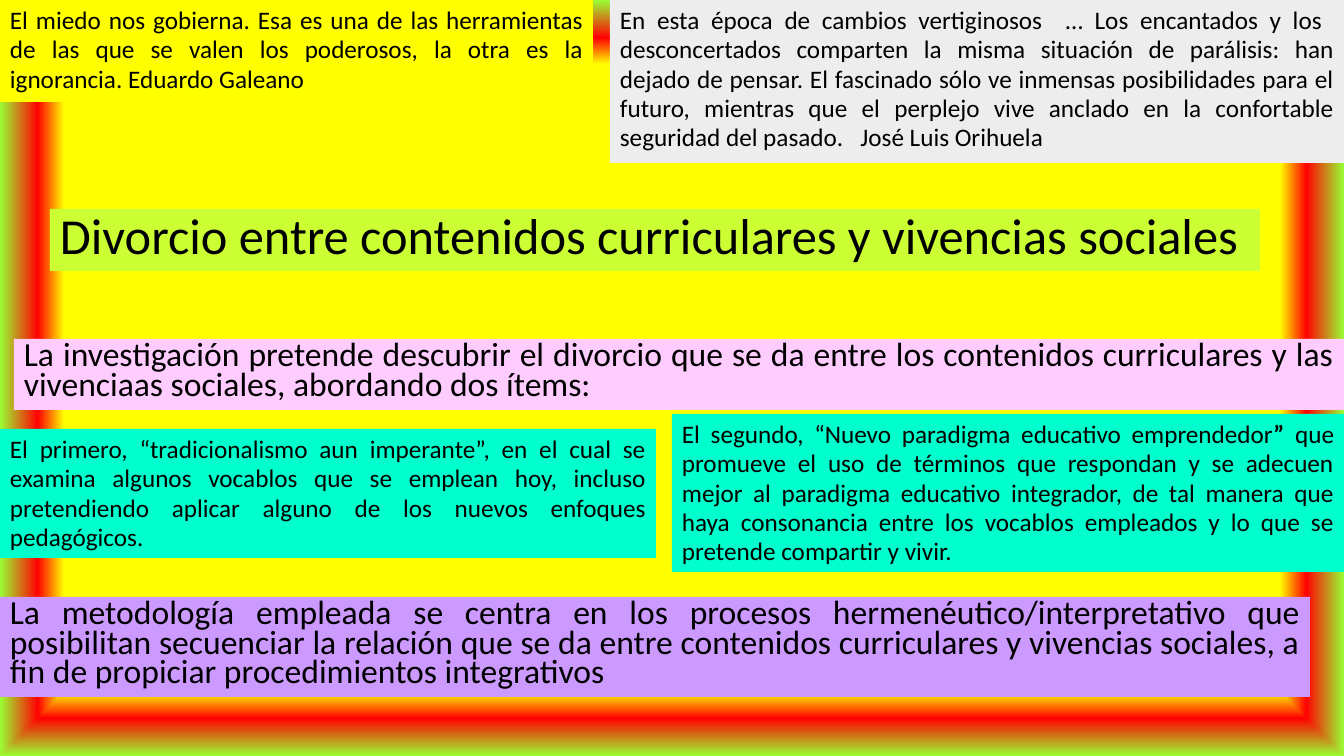
from pptx import Presentation
from pptx.dml.color import RGBColor
from pptx.enum.shapes import MSO_SHAPE
from pptx.enum.text import MSO_ANCHOR, MSO_AUTO_SIZE, PP_ALIGN
from pptx.oxml import parse_xml
from pptx.oxml.ns import nsdecls, qn
from pptx.util import Emu, Pt

PX = 914400 / 100.8
SLIDE_SIZE = (1344, 756)
FONT = "Calibri"

BLACK = RGBColor(0x00, 0x00, 0x00)
YELLOW = RGBColor(0xFF, 0xFF, 0x00)
RED = RGBColor(0xFF, 0x00, 0x00)
GRASS = RGBColor(0x99, 0xFF, 0x33)
GREEN = RGBColor(0x66, 0xFF, 0x33)
GRAY = RGBColor(0xED, 0xED, 0xED)
LIME = RGBColor(0xCC, 0xFF, 0x33)
PINK = RGBColor(0xFF, 0xCC, 0xFF)
TURQUOISE = RGBColor(0x00, 0xFF, 0xCC)
VIOLET = RGBColor(0xCC, 0x99, 0xFF)

BACKGROUND_STOPS = [(83, YELLOW), (90, RED), (100, GRASS), (100, GREEN)]


def px(length):
    return Emu(round(length * PX))


def paint_background(slide):
    """Rectangular gradient that leaves a glowing frame at the slide edges."""
    slide.background.fill.gradient()
    gradient = slide.element.find(".//" + qn("a:gradFill"))
    stops = "".join(
        f'<a:gs pos="{position * 1000}"><a:srgbClr val="{color}"/></a:gs>'
        for position, color in BACKGROUND_STOPS
    )
    center = 'l="50000" t="50000" r="50000" b="50000"'
    gradient.getparent().replace(gradient, parse_xml(
        f'<a:gradFill {nsdecls("a")} rotWithShape="1"><a:gsLst>{stops}</a:gsLst>'
        f'<a:path path="rect"><a:fillToRect {center}/></a:path></a:gradFill>'
    ))


def add_panel(slide, box, color, size, runs, spacing=21, wrap=True):
    """Filled box with one justified paragraph; runs are (text, bold) pairs."""
    panel = slide.shapes.add_shape(MSO_SHAPE.RECTANGLE, *map(px, box))
    panel.shadow.inherit = False
    panel.fill.solid()
    panel.fill.fore_color.rgb = color
    panel.line.fill.background()

    frame = panel.text_frame
    frame.word_wrap = wrap
    frame.auto_size = MSO_AUTO_SIZE.SHAPE_TO_FIT_TEXT
    frame.vertical_anchor = MSO_ANCHOR.TOP
    paragraph = frame.paragraphs[0]
    paragraph.alignment = PP_ALIGN.JUSTIFY
    paragraph.line_spacing = Pt(spacing)
    for text, bold in runs:
        run = paragraph.add_run()
        run.text = text
        run.font.name = FONT
        run.font.size = Pt(size)
        run.font.bold = bold
        run.font.color.rgb = BLACK


def add_statements(slide):
    """Purpose and methodology of the research."""
    add_panel(slide, (14, 339, 1330, 71), PINK, 24, [(
        "La investigación pretende descubrir el divorcio que se da entre los "
        "contenidos curriculares y las vivenciaas sociales, abordando dos ítems: ",
        False)])
    add_panel(slide, (0, 597, 1310, 100), VIOLET, 24, [(
        "La metodología empleada se centra en los procesos "
        "hermenéutico/interpretativo que posibilitan secuenciar la relación que "
        "se da entre contenidos curriculares y vivencias sociales, a fin de "
        "propiciar procedimientos integrativos", False)])


def add_quotes(slide):
    """Two opening quotations along the top edge."""
    add_panel(slide, (0, 0, 593, 102), YELLOW, 18, [(
        "El miedo nos gobierna. Esa es una de las herramientas de las que se "
        "valen los poderosos, la otra es la ignorancia. Eduardo Galeano", False)])
    add_panel(slide, (610, 0, 734, 163), GRAY, 18, [(
        "En esta época de cambios vertiginosos  … Los encantados y los  "
        "desconcertados comparten la misma situación de parálisis: han dejado de "
        "pensar. El fascinado sólo ve inmensas posibilidades para el futuro, "
        "mientras que el perplejo vive anclado en la confortable seguridad del "
        "pasado.   José Luis Orihuela", False)])


def add_items(slide):
    """The two items the research addresses."""
    add_panel(slide, (672, 414, 672, 158), TURQUOISE, 18, [
        ("El segundo, “Nuevo paradigma educativo emprendedor", False),
        ("” ", True),
        ("que promueve el uso de términos que respondan y se adecuen mejor al "
         "paradigma educativo integrador, de tal manera que haya consonancia "
         "entre los vocablos empleados y lo que se pretende compartir y vivir.",
         False)])
    add_panel(slide, (0, 429, 656, 129), TURQUOISE, 18, [(
        "El primero, “tradicionalismo aun imperante”, en el cual se examina "
        "algunos vocablos que se emplean hoy, incluso pretendiendo aplicar "
        "alguno de los nuevos enfoques pedagógicos.", False)])


def add_title(slide):
    add_panel(slide, (50, 209, 1210, 62), LIME, 36, [(
        "Divorcio entre contenidos curriculares y vivencias sociales", False)],
        spacing=36, wrap=False)


def main():
    presentation = Presentation()
    presentation.slide_width, presentation.slide_height = map(px, SLIDE_SIZE)
    slide = presentation.slides.add_slide(presentation.slide_layouts[6])
    paint_background(slide)
    add_statements(slide)
    add_quotes(slide)
    add_items(slide)
    add_title(slide)
    presentation.save("out.pptx")


if __name__ == "__main__":
    main()
